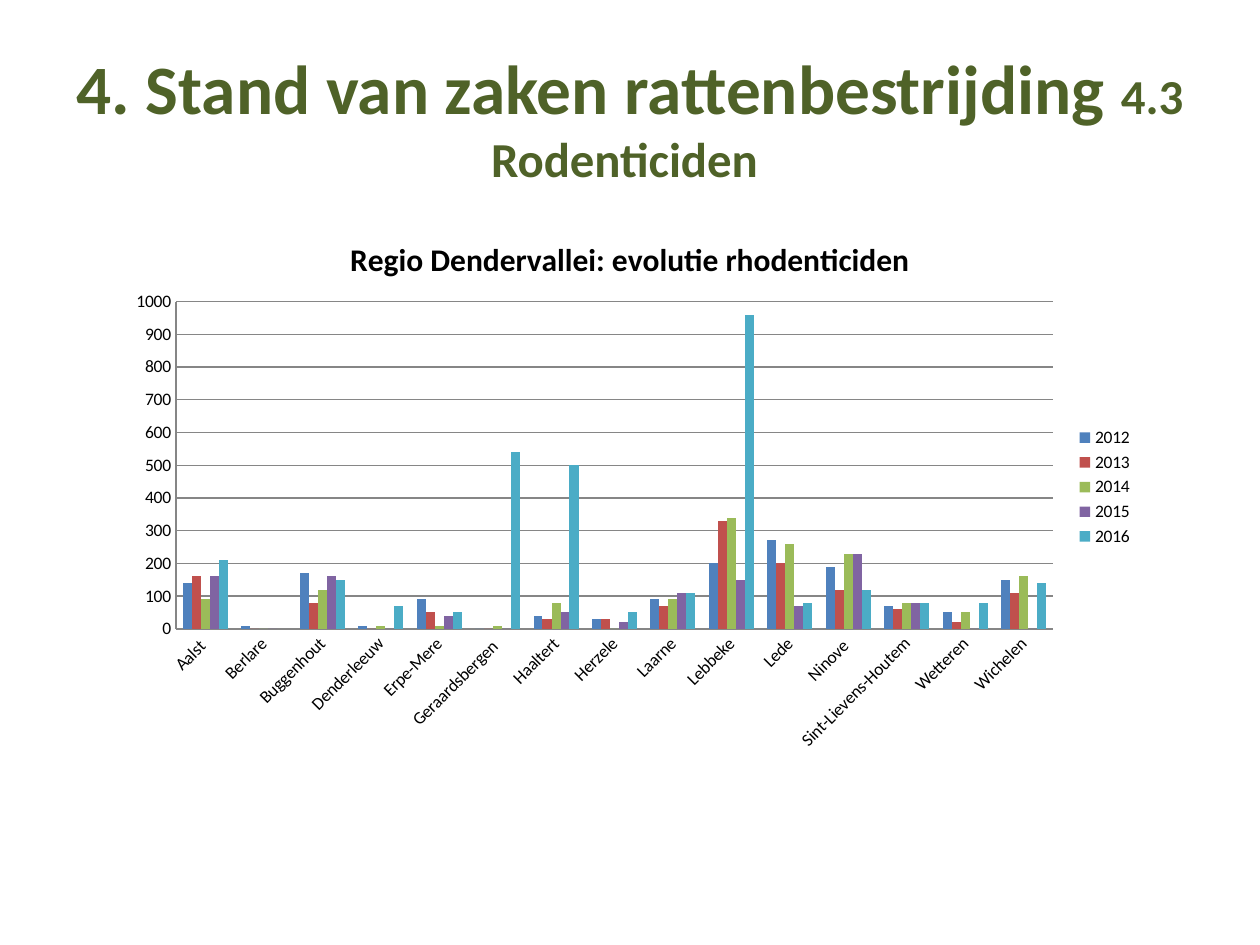
from pptx import Presentation
from pptx.chart.data import CategoryChartData
from pptx.dml.color import RGBColor
from pptx.enum.chart import XL_CHART_TYPE as ChartType
from pptx.enum.chart import XL_LEGEND_POSITION as LegendPosition
from pptx.enum.chart import XL_TICK_MARK as TickMark
from pptx.enum.text import MSO_ANCHOR as Anchor
from pptx.enum.text import MSO_AUTO_SIZE as AutoSize
from pptx.enum.text import PP_ALIGN as Align
from pptx.oxml import parse_xml
from pptx.oxml.ns import nsdecls
from pptx.util import Cm, Pt

MUNICIPALITIES = [
    "Aalst ", "Berlare", "Buggenhout", "Denderleeuw", "Erpe-Mere",
    "Geraardsbergen ", "Haaltert", "Herzele", "Laarne", "Lebbeke", "Lede",
    "Ninove ", "Sint-Lievens-Houtem", "Wetteren", "Wichelen",
]

# Year: (bar colour, use per municipality)
USE_BY_YEAR = {
    "2012": ("4F81BD", [140, 10, 170, 10, 90, 0, 40, 30, 90, 200, 270, 190, 70, 50, 150]),
    "2013": ("C0504D", [160, 0, 80, 0, 50, 0, 30, 30, 70, 330, 200, 120, 60, 20, 110]),
    "2014": ("9BBB59", [90, 0, 120, 10, 10, 10, 80, 0, 90, 340, 260, 230, 80, 50, 160]),
    "2015": ("8064A2", [160, 0, 160, 0, 40, 0, 50, 20, 110, 150, 70, 230, 80, 0, 0]),
    "2016": ("4BACC6", [210, None, 150, 70, 50, 540, 500, 50, 110, 960, 80, 120, 80, 80, 140]),
}


def color(hex_string):
    return RGBColor.from_string(hex_string)


class SlideBuilder:
    font_name = "Calibri"
    title_color = "4F6228"
    text_color = "000000"
    line_color = "868686"

    def __init__(self, slide):
        self.slide = slide

    def style_font(self, font, size, hex_string, bold=False):
        font.name = self.font_name
        font.size = Pt(size)
        font.bold = bold
        font.color.rgb = color(hex_string)

    def style_line(self, line):
        line.color.rgb = color(self.line_color)
        line.width = Pt(0.75)

    def title(self, parts, left, top, width, height):
        shape = self.slide.shapes.title
        shape.left, shape.top = Cm(left), Cm(top)
        shape.width, shape.height = Cm(width), Cm(height)
        text_frame = shape.text_frame
        text_frame.auto_size = AutoSize.NONE
        text_frame.word_wrap = True
        text_frame.vertical_anchor = Anchor.MIDDLE
        paragraph = text_frame.paragraphs[0]
        paragraph.alignment = Align.CENTER
        for text, size in parts:
            run = paragraph.add_run()
            run.text = text
            self.style_font(run.font, size, self.title_color, bold=True)

    def column_chart(self, heading, categories, series_by_name, left, top, width, height):
        data = CategoryChartData(number_format="0")
        data.categories = categories
        for name, (_, values) in series_by_name.items():
            data.add_series(name, values)
        chart = self.slide.shapes.add_chart(
            ChartType.COLUMN_CLUSTERED, Cm(left), Cm(top), Cm(width), Cm(height), data
        ).chart
        self.style_font(chart.font, 10, self.text_color)

        # Heading and legend
        chart.has_title = True
        chart.chart_title.text_frame.text = heading
        run = chart.chart_title.text_frame.paragraphs[0].runs[0]
        self.style_font(run.font, 18, self.text_color, bold=True)
        chart.chart_title.include_in_layout = False
        chart.has_legend = True
        chart.legend.position = LegendPosition.RIGHT
        chart.legend.include_in_layout = False

        # Columns
        plot = chart.plots[0]
        plot.gap_width = 150
        plot.overlap = 0
        plot.vary_by_categories = False
        for series, (fill_color, _) in zip(plot.series, series_by_name.values()):
            series.invert_if_negative = False
            series.format.fill.solid()
            series.format.fill.fore_color.rgb = color(fill_color)

        # Axes
        for axis in (chart.category_axis, chart.value_axis):
            axis.major_tick_mark = axis.minor_tick_mark = TickMark.NONE
            self.style_line(axis.format.line)
            self.style_font(axis.tick_labels.font, 10, self.text_color)
        label_body = chart.category_axis._element.txPr.bodyPr
        label_body.set("rot", "-2700000")
        label_body.set("vert", "horz")
        value_axis = chart.value_axis
        value_axis.minimum_scale = 0
        value_axis.maximum_scale = 1000
        value_axis.major_unit = 100
        value_axis.has_major_gridlines = True
        self.style_line(value_axis.major_gridlines.format.line)
        value_axis.tick_labels.number_format = "0"
        value_axis.tick_labels.number_format_is_linked = False
        self.place_plot_area(chart, x=0.06, y=0.16, w=0.85, h=0.6)

    def place_plot_area(self, chart, **fractions):
        modes = "".join(f'<c:{axis}Mode val="edge"/>' for axis in "xy")
        sizes = "".join(f'<c:{key} val="{value}"/>' for key, value in fractions.items())
        layout = parse_xml(
            f'<c:layout {nsdecls("c")}><c:manualLayout><c:layoutTarget val="inner"/>'
            f"{modes}{sizes}</c:manualLayout></c:layout>"
        )
        plot_area = chart._chartSpace.chart.plotArea
        for old_layout in plot_area.xpath("c:layout"):
            plot_area.remove(old_layout)
        plot_area.insert(0, layout)


def main():
    presentation = Presentation()
    presentation.slide_width, presentation.slide_height = Cm(25.4), Cm(19.05)
    slide = presentation.slides.add_slide(presentation.slide_layouts[5])
    builder = SlideBuilder(slide)

    # Title
    builder.title(
        [("4. Stand van zaken rattenbestrijding ", 39.6), ("4.3 Rodenticiden ", 27.9)],
        left=1.27, top=0.76, width=22.86, height=3.18,
    )

    # Rodenticide use per municipality
    builder.column_chart(
        "Regio Dendervallei: evolutie rhodenticiden", MUNICIPALITIES, USE_BY_YEAR,
        left=2.3, top=4.32, width=20.8, height=11,
    )

    presentation.save("out.pptx")


if __name__ == "__main__":
    main()
